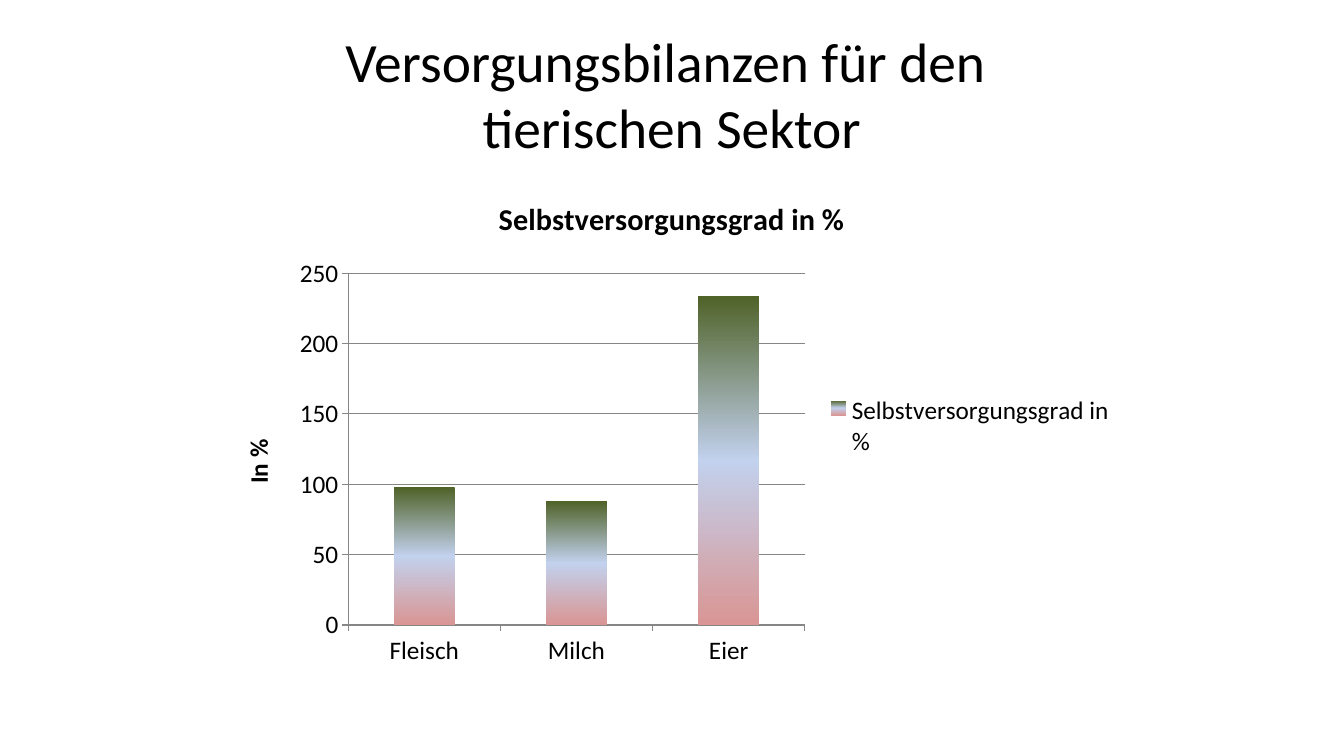
from lxml import etree
from pptx import Presentation
from pptx.chart.data import CategoryChartData
from pptx.dml.color import RGBColor
from pptx.enum.chart import XL_CHART_TYPE, XL_LEGEND_POSITION, XL_TICK_MARK
from pptx.enum.text import MSO_ANCHOR, MSO_AUTO_SIZE, PP_ALIGN
from pptx.oxml.ns import qn
from pptx.util import Cm, Pt

COLUMN = XL_CHART_TYPE.COLUMN_CLUSTERED
RIGHT = XL_LEGEND_POSITION.RIGHT
OUTSIDE = XL_TICK_MARK.OUTSIDE
NO_TICK = XL_TICK_MARK.NONE
MIDDLE = MSO_ANCHOR.MIDDLE
NO_FIT = MSO_AUTO_SIZE.NONE
CENTER = PP_ALIGN.CENTER

FONT = "Calibri"
COLORS = {"text": "000000", "line": "868686",
          "top": "4F6228", "middle": "C2D1ED", "bottom": "D99694"}
BAR_STOPS = [(0, "top"), (50, "middle"), (100, "bottom")]
MEASURE = "Selbstversorgungsgrad in %"
SUPPLY = {"Fleisch": 98, "Milch": 88, "Eier": 234}


def rgb(name):
    return RGBColor.from_string(COLORS[name])


def set_attrs(obj, values):
    for name, value in values.items():
        setattr(obj, name, value)


def format_font(font, size, bold=False):
    set_attrs(font, {"name": FONT, "size": Pt(size), "bold": bold})
    font.color.rgb = rgb("text")


def format_line(line):
    line.color.rgb = rgb("line")
    line.width = Pt(0.75)


def add_title(s, text):
    sp = s.shapes.title
    set_attrs(sp, {"left": Cm(1.69), "top": Cm(0.76),
                   "width": Cm(30.48), "height": Cm(3.18)})
    tf = sp.text_frame
    set_attrs(tf, {"text": text, "word_wrap": True,
                   "auto_size": NO_FIT, "vertical_anchor": MIDDLE})
    p = tf.paragraphs[0]
    p.alignment = CENTER
    for r in p.runs:
        format_font(r.font, 39.6)


def add_heading(owner, text, size):
    tf = owner.text_frame
    tf.text = text
    format_font(tf.paragraphs[0].runs[0].font, size, True)


def fill_gradient(fmt, stops):
    fmt.fill.gradient()
    fmt.fill.gradient_angle = 270
    gs_list = fmt.fill._xPr.find(qn("a:gradFill")).find(qn("a:gsLst"))
    for gs in list(gs_list):
        gs_list.remove(gs)
    for percent, name in stops:
        gs = etree.SubElement(gs_list, qn("a:gs"), pos=str(percent * 1000))
        etree.SubElement(gs, qn("a:srgbClr"), val=COLORS[name])


def add_supply_chart(s):
    data = CategoryChartData()
    data.categories = list(SUPPLY)
    data.add_series(MEASURE, list(SUPPLY.values()))
    chart = s.shapes.add_chart(COLUMN, Cm(5.5), Cm(4.45), Cm(22.86),
                               Cm(12.57), data).chart
    format_font(chart.font, 18)
    chart.has_title = True
    add_heading(chart.chart_title, MEASURE, 21.6)
    chart.chart_title.include_in_layout = False
    chart.has_legend = True
    set_attrs(chart.legend, {"position": RIGHT, "include_in_layout": False})

    for axis in (chart.category_axis, chart.value_axis):
        set_attrs(axis, {"major_tick_mark": OUTSIDE,
                         "minor_tick_mark": NO_TICK})
        format_line(axis.format.line)
    axis = chart.value_axis
    axis.has_major_gridlines = True
    format_line(axis.major_gridlines.format.line)
    add_heading(axis.axis_title, "In %", 18)

    plot = chart.plots[0]
    set_attrs(plot, {"gap_width": 150, "vary_by_categories": False})
    fill_gradient(plot.series[0].format, BAR_STOPS)


def main():
    prs = Presentation()
    set_attrs(prs, {"slide_width": Cm(33.87), "slide_height": Cm(19.05)})
    s = prs.slides.add_slide(prs.slide_layouts[5])
    add_title(s, "Versorgungsbilanzen für den \vtierischen Sektor")
    add_supply_chart(s)
    prs.save("out.pptx")


if __name__ == "__main__":
    main()
